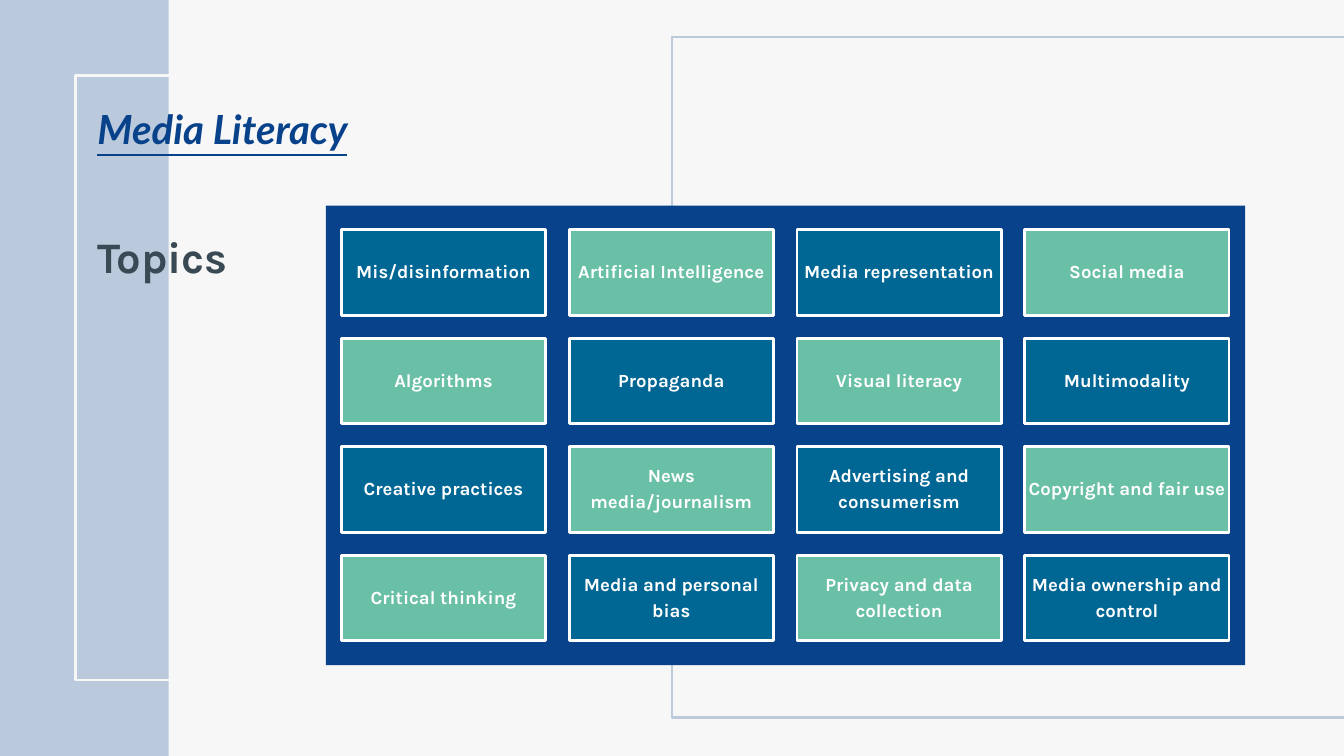
from lxml.etree import SubElement
from pptx import Presentation
from pptx.dml.color import RGBColor
from pptx.enum.shapes import MSO_SHAPE
from pptx.enum.text import MSO_ANCHOR, PP_ALIGN
from pptx.oxml.ns import qn
from pptx.util import Inches, Pt

TOPICS = [
    ["Mis/disinformation", "Artificial Intelligence", "Media representation", "Social media"],
    ["Algorithms", "Propaganda", "Visual literacy", "Multimodality"],
    ["Creative practices", "News media/journalism", "Advertising and consumerism", "Copyright and fair use"],
    ["Critical thinking", "Media and personal bias", "Privacy and data collection", "Media ownership and control"],
]
NAVY, TEAL, GREEN = "07428A", "006794", "6ABFA7"
PALE, MIST, SLATE, WHITE = "F7F7F7", "BDCADB", "394A54", "FFFFFF"
CARD_LEFT, CARD_TOP = 5.08, 3.42
CARD_WIDTH, CARD_HEIGHT = 3.04, 1.27
COLUMN_STEP, ROW_STEP = 3.39, 1.615


def color(value):
    return RGBColor.from_string(value)


def add_rectangle(slide, box, fill=None, line=None):
    shape = slide.shapes.add_shape(MSO_SHAPE.RECTANGLE, *map(Inches, box))
    shape.shadow.inherit = False
    if fill:
        shape.fill.solid()
        shape.fill.fore_color.rgb = color(fill)
    else:
        shape.fill.background()
    if line:
        shape.line.color.rgb = color(line)
        shape.line.width = Pt(3)
    else:
        shape.line.fill.background()
    return shape


def set_transparency(shape, opacity):
    fill_color = shape.fill._xPr.find(qn("a:solidFill"))[0]
    SubElement(fill_color, qn("a:alpha")).set("val", str(opacity * 1000))


def write_text(shape, text, font_name, size, spacing, font_color, margins=(0, 0, 0, 0)):
    frame = shape.text_frame
    frame.text = text
    frame.word_wrap = True
    frame.margin_left, frame.margin_top, frame.margin_right, frame.margin_bottom = map(Inches, margins)
    paragraph = frame.paragraphs[0]
    paragraph.line_spacing = Pt(spacing)
    font = paragraph.runs[0].font
    font.name, font.size, font.bold = font_name, Pt(size), True
    font.color.rgb = color(font_color)
    return paragraph


def add_heading(slide, box, text, font_name, size, spacing, font_color):
    text_box = slide.shapes.add_textbox(*map(Inches, box))
    return write_text(text_box, text, font_name, size, spacing, font_color)


def add_card(slide, row, column, topic):
    left = CARD_LEFT + column * COLUMN_STEP
    top = CARD_TOP + row * ROW_STEP
    fill = GREEN if (row + column) % 2 else TEAL
    card = add_rectangle(slide, (left, top, CARD_WIDTH, CARD_HEIGHT), fill, WHITE)
    paragraph = write_text(card, topic, "Karla", 19.9, 27.9, WHITE, (0.04, 0.04, 0.04, 0.13))
    paragraph.alignment = PP_ALIGN.CENTER
    card.text_frame.vertical_anchor = MSO_ANCHOR.MIDDLE


def main():
    presentation = Presentation()
    presentation.slide_width, presentation.slide_height = Inches(20), Inches(11.25)
    slide = presentation.slides.add_slide(presentation.slide_layouts[6])
    slide.background.fill.solid()
    slide.background.fill.fore_color.rgb = color(PALE)

    side_band = add_rectangle(slide, (0, 0, 2.51, 11.25), NAVY)
    set_transparency(side_band, 25)
    add_rectangle(slide, (1.12, 1.12, 17.75, 9), line=PALE)
    add_rectangle(slide, (10, 0.55, 10.71, 10.13), line=MIST)

    title = add_heading(slide, (1.45, 1.43, 7.68, 0.81), "Media Literacy", "Lato", 43, 60.2, NAVY)
    title.runs[0].font.italic = True
    title.runs[0].font.underline = True

    add_rectangle(slide, (4.85, 3.06, 13.68, 6.84), NAVY)
    for row, topics in enumerate(TOPICS):
        for column, topic in enumerate(topics):
            add_card(slide, row, column, topic)
    add_heading(slide, (1.45, 3.29, 2.59, 0.87), "Topics", "Karla", 46.6, 65.2, SLATE)

    presentation.save("out.pptx")


if __name__ == "__main__":
    main()
